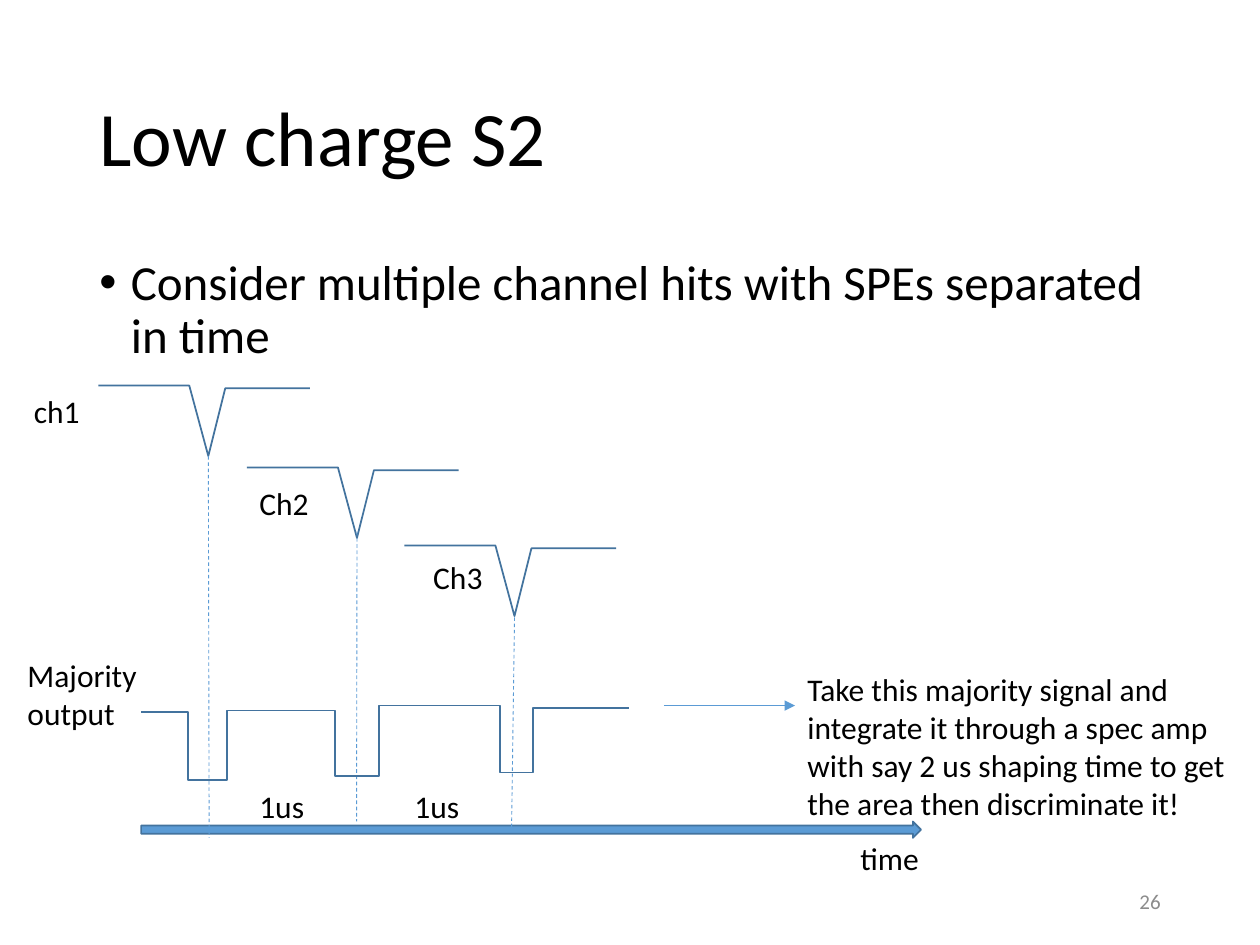
import pptx
import pptx.dml.color
import pptx.enum.dml
import pptx.enum.shapes
import pptx.enum.text
import pptx.oxml.xmlchemy
import pptx.util

Inches = pptx.util.Inches
Anchor = pptx.enum.text.MSO_ANCHOR
Align = pptx.enum.text.PP_ALIGN
AutoSize = pptx.enum.text.MSO_AUTO_SIZE
BLACK, GREY, BLUE, DARK_BLUE = "000000", "8C8C8C", "5B9BD5", "43739E"


def color(value):
    return pptx.dml.color.RGBColor.from_string(value)


def set_values(target, values):
    for name, value in values.items():
        setattr(target, name, value)


def add_xml(parent, tag, **attributes):
    element = pptx.oxml.xmlchemy.OxmlElement(tag)
    for name, value in attributes.items():
        element.set(name, value)
    parent.append(element)


def style_line(line, value, width):
    line.color.rgb = color(value)
    line.width = pptx.util.Pt(width)


def add_text(slide, box, text, size=18, value=BLACK, frame=None, layout=None):
    shape = slide.shapes.add_textbox(*map(Inches, box))
    set_values(shape.text_frame, {"word_wrap": True, **(frame or {})})
    paragraph = shape.text_frame.paragraphs[0]
    set_values(paragraph, layout or {})
    run = paragraph.add_run()
    run.text = text
    set_values(run.font, {"name": "Calibri", "size": pptx.util.Pt(size)})
    run.font.color.rgb = color(value)
    return paragraph


def add_label(slide, box, text, wrap=False):
    add_text(slide, box, text, frame={
        "word_wrap": wrap, "auto_size": AutoSize.SHAPE_TO_FIT_TEXT})


def add_trace(slide, box, shares):
    left, top, width, height = box
    points = [(Inches(left + x * width), Inches(top + y * height)) for x, y in shares]
    builder = slide.shapes.build_freeform(*points[0], scale=1.0)
    builder.add_line_segments(points[1:], close=False)
    shape = builder.convert_to_shape()
    shape.shadow.inherit = False
    shape.fill.background()
    style_line(shape.line, DARK_BLUE, 1)


def add_thin_line(slide, start, end):
    connector = slide.shapes.add_connector(
        pptx.enum.shapes.MSO_CONNECTOR.STRAIGHT, *map(Inches, start + end))
    style_line(connector.line, BLUE, 0.5)
    add_xml(connector._element.spPr, "a:effectLst")
    return connector


def add_title(slide, box):
    add_text(slide, box, "Low charge S2", 44,
             frame={"vertical_anchor": Anchor.MIDDLE}, layout={"line_spacing": 0.9})


def add_body(slide, box):
    paragraph = add_text(
        slide, box, "Consider multiple channel hits with SPEs separated in time", 28,
        layout={"line_spacing": 0.9, "space_before": pptx.util.Pt(10)})
    properties = paragraph._p.get_or_add_pPr()
    properties.set("marL", str(Inches(0.25)))
    properties.set("indent", str(-Inches(0.25)))
    add_xml(properties, "a:buFont", typeface="Arial")
    add_xml(properties, "a:buChar", char="•")


def add_page_number(slide, box):
    add_text(slide, box, "26", 12, GREY, frame={"vertical_anchor": Anchor.MIDDLE},
             layout={"alignment": Align.RIGHT})


def add_time_axis(slide, box):
    left, top, width, height = box
    shape = slide.shapes.add_shape(
        pptx.enum.shapes.MSO_SHAPE.RIGHT_ARROW, *map(Inches, box))
    shape.shadow.inherit = False
    shape.fill.solid()
    shape.fill.fore_color.rgb = color(BLUE)
    style_line(shape.line, DARK_BLUE, 1)
    add_label(slide, (left + width - 0.58, top + 0.09, 0.67, 0.4), "time")
    for offset in (0.84, 2.07):
        add_label(slide, (left + offset, top - 0.32, 0.56, 0.4), "1us")


def add_channel(slide, box, name, label_offset, drop_start, drop_end):
    left, top, width, height = box
    add_trace(slide, box, [(0, 0), (0.43, 0), (0.52, 1), (0.6, 0.04), (1, 0.04)])
    connector = add_thin_line(slide, (left + 0.52 * width, drop_start), drop_end)
    connector.line.dash_style = pptx.enum.dml.MSO_LINE.DASH
    add_label(slide, (left + label_offset[0], top + label_offset[1], 0.6, 0.4), name)


def add_majority_output(slide, box):
    left, top, width, height = box
    levels = [0.05, 0.59, 0.04, 0.56, 0, 0.53, 0.02]
    edges = [0, 0.37, 0.68, 1.54, 1.89, 2.85, 3.11, 3.87]
    shares = [(x / width, level / height)
              for level, start, end in zip(levels, edges, edges[1:])
              for x in (start, end)]
    add_trace(slide, box, shares)
    add_label(slide, (left - 1, top - 0.44, 1.23, 0.71), "Majority output", wrap=True)


def add_integration_note(slide, box):
    left, top, width, height = box
    connector = add_thin_line(slide, (left - 1.04, top + 0.33), (left, top + 0.33))
    add_xml(connector.get_or_add_ln(), "a:tailEnd", type="triangle")
    add_label(slide, box, "Take this majority signal and integrate it through a spec amp　"
              "with say 2 us shaping time to get the area then discriminate it!", wrap=True)


def main():
    presentation = pptx.Presentation()
    set_values(presentation, {"slide_width": Inches(10), "slide_height": Inches(7.5)})
    slide = presentation.slides.add_slide(presentation.slide_layouts[6])
    add_title(slide, (0.69, 0.4, 8.62, 1.45))
    add_body(slide, (0.69, 2, 8.62, 4.76))
    add_page_number(slide, (7.06, 6.95, 2.25, 0.4))
    add_time_axis(slide, (1.12, 6.52, 6.19, 0.13))
    channels = [
        (0.78, 3.06, "ch1", (-0.61, 0), 3.62, (1.66, 6.65)),
        (1.96, 3.71, "Ch2", (0, 0.08), 4.22, (2.83, 6.52)),
        (3.21, 4.33, "Ch3", (0.13, 0.05), 4.9, (4.06, 6.59)),
    ]
    for left, top, *details in channels:
        add_channel(slide, (left, top, 1.68, 0.56), *details)
    add_majority_output(slide, (1.12, 5.6, 3.87, 0.58))
    add_integration_note(slide, (6.31, 5.27, 3.72, 1.31))
    presentation.save("out.pptx")


if __name__ == "__main__":
    main()
